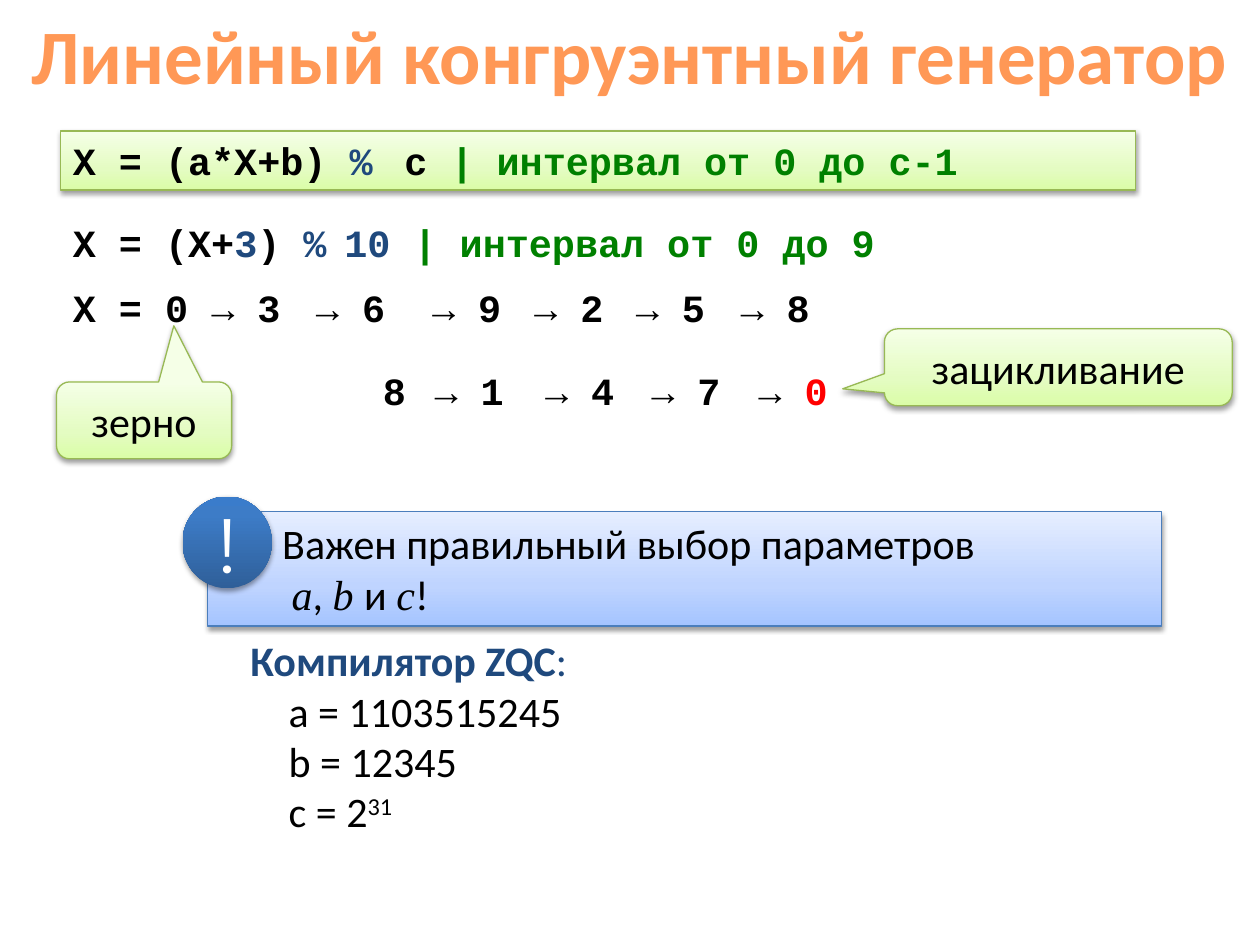
from dataclasses import dataclass

from pptx import Presentation
from pptx import oxml
from pptx.dml.color import RGBColor
from pptx.enum import shapes, text
from pptx.oxml import ns
from pptx.util import Cm, Pt

KIND = shapes.MSO_SHAPE
MID = text.MSO_ANCHOR.MIDDLE
CENTER = text.PP_ALIGN.CENTER


@dataclass(frozen=True)
class Theme:
    """Hold the colours, fonts and type sizes."""
    title: str = "FF9856"
    ink: str = "000000"
    blue: str = "1F497D"
    note: str = "008000"
    red: str = "FF0000"
    white: str = "FFFFFF"
    lime: tuple = ((0, "DAFDA7"), (35, "E4FCC2"), (100, "F5FFE7"))
    sky: tuple = ((0, "A4C4FF"), (35, "BFD4FF"), (100, "E6EEFF"))
    navy: tuple = ((0, "2F5F99"), (80, "3D7CC7"), (100, "3A7CCB"))
    leaf: str = "98B955"
    edge: str = "4B7EBC"
    sans: str = "Calibri"
    mono: str = "Courier New"
    serif: str = "Times New Roman"
    mark: str = "Montserrat"
    big: int = 44
    body: int = 24
    code: int = 22
    gap: int = 17


T = Theme()


def style(font, name=None, size=None, color=None, bold=None, italic=None):
    """Apply the given font settings."""
    if name:
        font.name = name
    if size:
        font.size = Pt(size)
    if color:
        font.color.rgb = RGBColor.from_string(color)
    if bold is not None:
        font.bold = bold
    if italic is not None:
        font.italic = italic


def write(para, runs, **look):
    """Fill a paragraph with strings or (string, settings) pairs."""
    style(para.font, **look)
    for item in runs:
        words, own = (item, {}) if isinstance(item, str) else item
        run = para.add_run()
        run.text = words
        style(run.font, **{**look, **own})


def indent(para, left):
    """Set the left margin of a paragraph."""
    para._p.get_or_add_pPr().set("marL", str(Cm(left)))


def label(slide, box, runs, **look):
    """Add a wrapped text box with one paragraph and return its frame."""
    frame = slide.shapes.add_textbox(*map(Cm, box)).text_frame
    frame.word_wrap = True
    write(frame.paragraphs[0], runs, **look)
    return frame


def code(slide, box, *runs):
    """Add a line of bold code."""
    label(slide, box, runs, name=T.mono, size=T.code, color=T.ink, bold=True)


def panel(slide, kind, box, stops, edge=None):
    """Add a shape with an upward gradient and a soft shadow."""
    shape = slide.shapes.add_shape(kind, *map(Cm, box))
    shape.fill.gradient()
    shape.fill.gradient_angle = 90
    rows = shape._element.spPr.find(".//" + ns.qn("a:gsLst"))
    for old in list(rows):
        rows.remove(old)
    for pos, color in stops:
        rows.append(oxml.parse_xml(
            f'<a:gs {ns.nsdecls("a")} pos="{pos * 1000}">'
            f'<a:srgbClr val="{color}"/></a:gs>'))
    if edge:
        shape.line.color.rgb = RGBColor.from_string(edge)
        shape.line.width = Pt(0.75)
    else:
        shape.line.fill.background()
    shape.shadow.inherit = False
    shape._element.spPr.find(ns.qn("a:effectLst")).append(oxml.parse_xml(
        f'<a:outerShdw {ns.nsdecls("a")} blurRad="{Pt(3.1)}" '
        f'dist="{Pt(1.6)}" dir="5400000" rotWithShape="0">'
        '<a:srgbClr val="000000"><a:alpha val="38000"/></a:srgbClr>'
        '</a:outerShdw>'))
    shape.text_frame.paragraphs[0].alignment = text.PP_ALIGN.LEFT
    shape.text_frame.vertical_anchor = text.MSO_ANCHOR.TOP
    return shape


def title(slide, box, words):
    """Place and format the title."""
    head = slide.shapes.title
    head.left, head.top, head.width, head.height = map(Cm, box)
    head.text_frame.vertical_anchor = MID
    para = head.text_frame.paragraphs[0]
    para.alignment = CENTER
    write(para, [words], name=T.sans, size=T.big, color=T.title, bold=True)


def rules(slide, box):
    """Place the general formula and its example."""
    x, y, w, h = box
    blue, note = {"color": T.blue}, {"color": T.note}
    bar = panel(slide, KIND.RECTANGLE, box, T.lime, T.leaf)
    write(bar.text_frame.paragraphs[0],
          ["X = (a*X+b) ", ("%", blue), (" ", {"name": T.sans}), " c ",
           ("| интервал от 0 до c-1", note)],
          name=T.mono, size=T.code, color=T.ink, bold=True)
    code(slide, (x, y + 1.65, w, h), "X = (X+", ("3", blue), ") ",
         ("%", blue), (" ", {"size": T.gap}), ("10 ", blue),
         ("| интервал от 0 до 9", note))


def chain(slide, box):
    """Place the two rows of generated numbers."""
    x, y, w, h = box
    low = y + 1.68
    code(slide, (x, y, 3.45, h), "X = 0")
    code(slide, (x + 6.25, low, 1.63, h), "8")
    rows = ((y, "369258", (2.79, 4.9, 7.24, 9.3, 11.35, 13.46)),
            (low, "147", (7.29, 9.52, 11.66)))
    for top, digits, lefts in rows:
        for digit, left in zip(digits, lefts):
            code(slide, (x + left, top, w, h), f"→ {digit}")
    code(slide, (x + 13.82, low, w, h), "→ ", ("0", {"color": T.red}))


def callout(slide, box, words, tip):
    """Place a speech bubble pointing at the tip."""
    shape = panel(slide, KIND.ROUNDED_RECTANGULAR_CALLOUT, box, T.lime, T.leaf)
    for i, part in enumerate((*tip, 0.17)):
        shape.adjustments[i] = part
    shape.text_frame.vertical_anchor = MID
    para = shape.text_frame.paragraphs[0]
    para.alignment = CENTER
    write(para, [words], name=T.sans, size=T.body, color=T.ink)


def advice(slide, box):
    """Place the warning bar with its round mark."""
    x, y, w, h = box
    bar = panel(slide, KIND.RECTANGLE, box, T.sky, T.edge)
    para = bar.text_frame.paragraphs[0]
    indent(para, 1.25)
    look = {"name": T.sans, "size": T.body, "color": T.ink}
    var = {"name": T.serif, "italic": True}
    write(para, ["Важен правильный выбор параметров"], **look)
    para.add_line_break()
    write(para, [" ", ("a", var), ", ", ("b ", var), "и ", ("с", var), "!"],
          **look)
    dot = panel(slide, KIND.OVAL, (x - 0.51, y - 0.3, 1.8, 1.85), T.navy)
    dot.text_frame.word_wrap = False
    dot.text_frame.vertical_anchor = MID
    para = dot.text_frame.paragraphs[0]
    para.alignment = CENTER
    write(para, ["!"], name=T.mark, size=T.big, color=T.white)


def sample(slide, box):
    """Place the list of compiler parameters."""
    look = {"name": T.sans, "size": T.body}
    frame = label(slide, box, [("Компилятор ZQC", {"bold": True}), ":"],
                  color=T.blue, **look)
    for words in ("a = 1103515245", "b = 12345", "c = 2"):
        para = frame.add_paragraph()
        indent(para, 0.77)
        write(para, [words], color=T.ink, **look)
    write(para, ["31"], color=T.ink, **look)
    para.runs[-1]._r.get_or_add_rPr().set("baseline", "30000")


def main():
    """Build the slide and save it."""
    deck = Presentation()
    deck.slide_width, deck.slide_height = Cm(25.4), Cm(19.05)
    slide = deck.slides.add_slide(deck.slide_layouts[5])
    title(slide, (0, 0, 25.4, 2.16), "Линейный конгруэнтный генератор")
    rules(slide, (1.22, 2.64, 21.67, 1.19))
    chain(slide, (1.22, 5.6, 2.69, 1.19))
    callout(slide, (1.14, 7.7, 3.53, 1.55), "зерно", (0.17, -1.23))
    callout(slide, (17.83, 6.63, 7.01, 1.55), "зацикливание", (-0.62, 0.28))
    advice(slide, (4.19, 10.31, 19.23, 2.31))
    sample(slide, (4.8, 12.67, 8.2, 4.37))
    deck.save("out.pptx")


if __name__ == "__main__":
    main()
